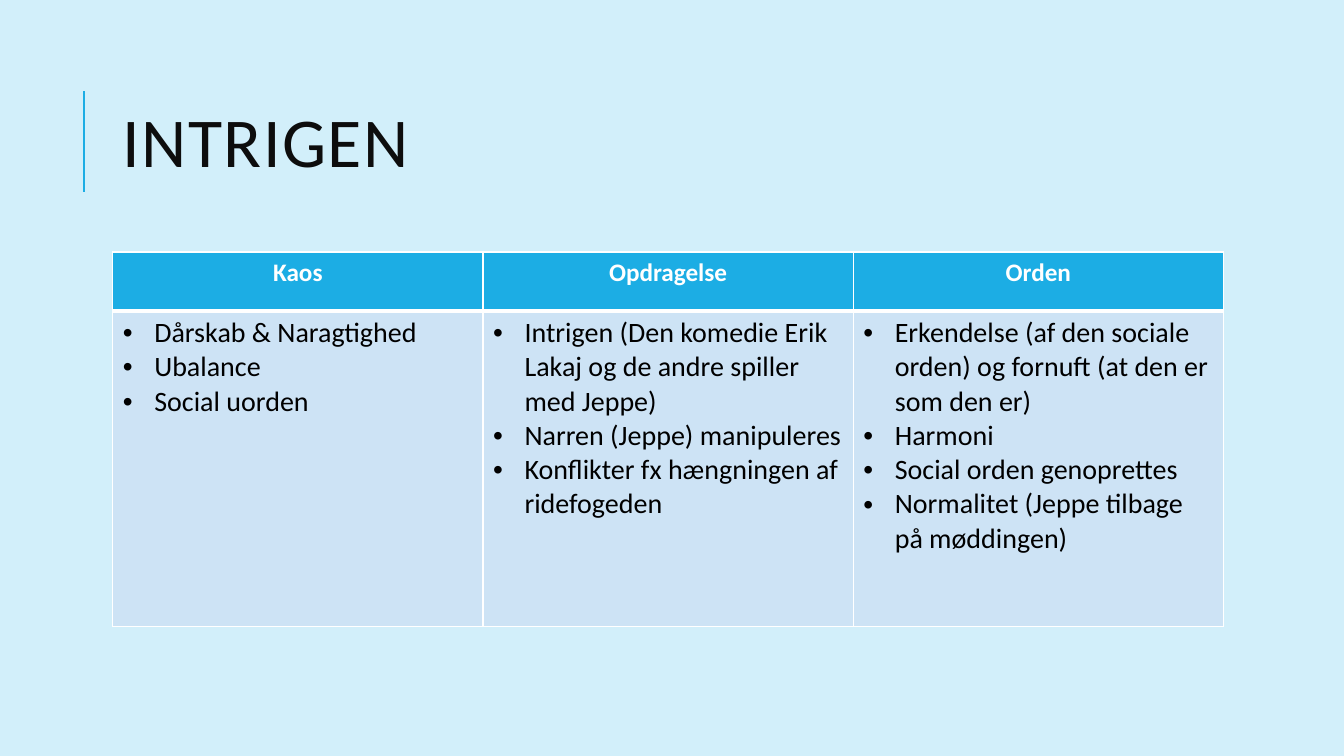
from lxml import etree
from pptx import Presentation
from pptx.dml.color import RGBColor
from pptx.enum.shapes import MSO_CONNECTOR
from pptx.enum.text import MSO_ANCHOR, MSO_AUTO_SIZE, PP_ALIGN
from pptx.oxml.ns import qn
from pptx.util import Pt

STRAIGHT = MSO_CONNECTOR.STRAIGHT
MIDDLE = MSO_ANCHOR.MIDDLE
NO_AUTOFIT = MSO_AUTO_SIZE.NONE
LEFT, CENTER = PP_ALIGN.LEFT, PP_ALIGN.CENTER

TITLE = "INTRIGEN"
PHASES = {
    "Kaos": ["Dårskab & Naragtighed", "Ubalance", "Social uorden"],
    "Opdragelse": [
        "Intrigen (Den komedie Erik Lakaj og de andre spiller med Jeppe)",
        "Narren (Jeppe) manipuleres",
        "Konflikter fx hængningen af ridefogeden",
    ],
    "Orden": [
        "Erkendelse (af den sociale orden) og fornuft (at den er som den er)",
        "Harmoni",
        "Social orden genoprettes",
        "Normalitet (Jeppe tilbage på møddingen)",
    ],
}
COLORS = {
    "background": "D2EFFA",
    "accent": "1CADE4",
    "title": "0D0D0D",
    "white": "FFFFFF",
    "black": "000000",
    "body": "CDE3F5",
}
FONT = "Calibri"
CONTENT_LEFT = 80.5
TABLE_TOP, TABLE_WIDTH = 180, 793.5
HEADER_HEIGHT, BODY_HEIGHT = 42, 225.25
RULE_X, RULE_TOP, RULE_BOTTOM = 60, 65, 137
BULLET_INDENT = 22.5


def color(name):
    return RGBColor.from_string(COLORS[name])


def style(paragraph, size, color_name, bold=False, align=LEFT):
    paragraph.alignment = align
    font = paragraph.font
    font.name, font.size, font.bold = FONT, Pt(size), bold
    font.color.rgb = color(color_name)


def add_bullet(paragraph):
    properties = paragraph._p.get_or_add_pPr()
    properties.set("marL", str(Pt(BULLET_INDENT)))
    properties.set("indent", str(-Pt(BULLET_INDENT)))
    bullet_font = etree.Element(qn("a:buFont"), typeface="Arial")
    bullet = etree.Element(qn("a:buChar"), char="•")
    properties.insert(0, bullet_font)
    bullet_font.addnext(bullet)


def add_borders(cell, widths):
    properties = cell._tc.get_or_add_tcPr()
    for side, width in zip("LRTB", widths):
        line = etree.SubElement(properties, qn(f"a:ln{side}"), w=str(Pt(width)))
        fill = etree.SubElement(line, qn("a:solidFill"))
        etree.SubElement(fill, qn("a:srgbClr"), val=COLORS["white"])


def fill_cell(cell, lines, fill_name, border_widths):
    add_borders(cell, border_widths)
    cell.fill.solid()
    cell.fill.fore_color.rgb = color(fill_name)
    cell.text_frame.text = "\n".join(lines)
    return cell.text_frame.paragraphs


def add_title(slide):
    title = slide.shapes.title
    title.left, title.top = Pt(CONTENT_LEFT), Pt(46)
    title.width, title.height = Pt(765.5), Pt(118)
    frame = title.text_frame
    frame.text = TITLE
    frame.word_wrap = True
    frame.auto_size = NO_AUTOFIT
    frame.vertical_anchor = MIDDLE
    heading = frame.paragraphs[0]
    style(heading, 50, "title")
    heading.line_spacing = 0.8
    heading.runs[0].font._element.set("spc", "100")


def add_rule(slide):
    rule = slide.shapes.add_connector(
        STRAIGHT, Pt(RULE_X), Pt(RULE_BOTTOM), Pt(RULE_X), Pt(RULE_TOP))
    rule.line.color.rgb = color("accent")
    rule.line.width = Pt(1.5)
    etree.SubElement(rule._element.spPr, qn("a:effectLst"))


def add_phases(slide):
    table = slide.shapes.add_table(
        2, len(PHASES), Pt(CONTENT_LEFT), Pt(TABLE_TOP),
        Pt(TABLE_WIDTH), Pt(HEADER_HEIGHT + BODY_HEIGHT)).table
    table.rows[0].height = Pt(HEADER_HEIGHT)
    table.rows[1].height = Pt(BODY_HEIGHT)
    for column, (phase, points) in enumerate(PHASES.items()):
        table.columns[column].width = Pt(TABLE_WIDTH / len(PHASES))
        for heading in fill_cell(table.cell(0, column), [phase], "accent", (1, 1, 1, 3)):
            style(heading, 18, "white", bold=True, align=CENTER)
        for point in fill_cell(table.cell(1, column), points, "body", (1, 1, 3, 1)):
            style(point, 20, "black")
            add_bullet(point)


def main():
    deck = Presentation()
    deck.slide_width, deck.slide_height = Pt(960), Pt(540)
    slide = deck.slides.add_slide(deck.slide_layouts[5])
    slide.background.fill.solid()
    slide.background.fill.fore_color.rgb = color("background")
    add_rule(slide)
    add_title(slide)
    add_phases(slide)
    deck.save("out.pptx")


if __name__ == "__main__":
    main()
